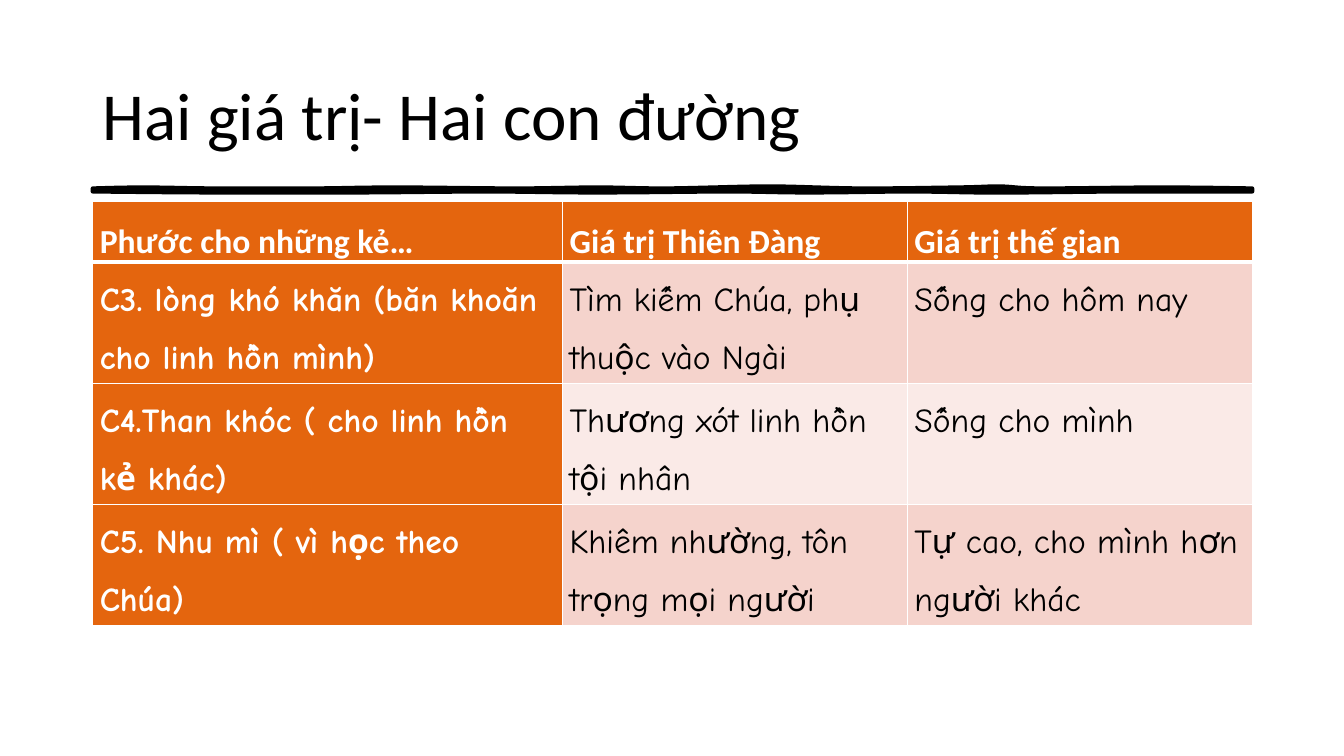
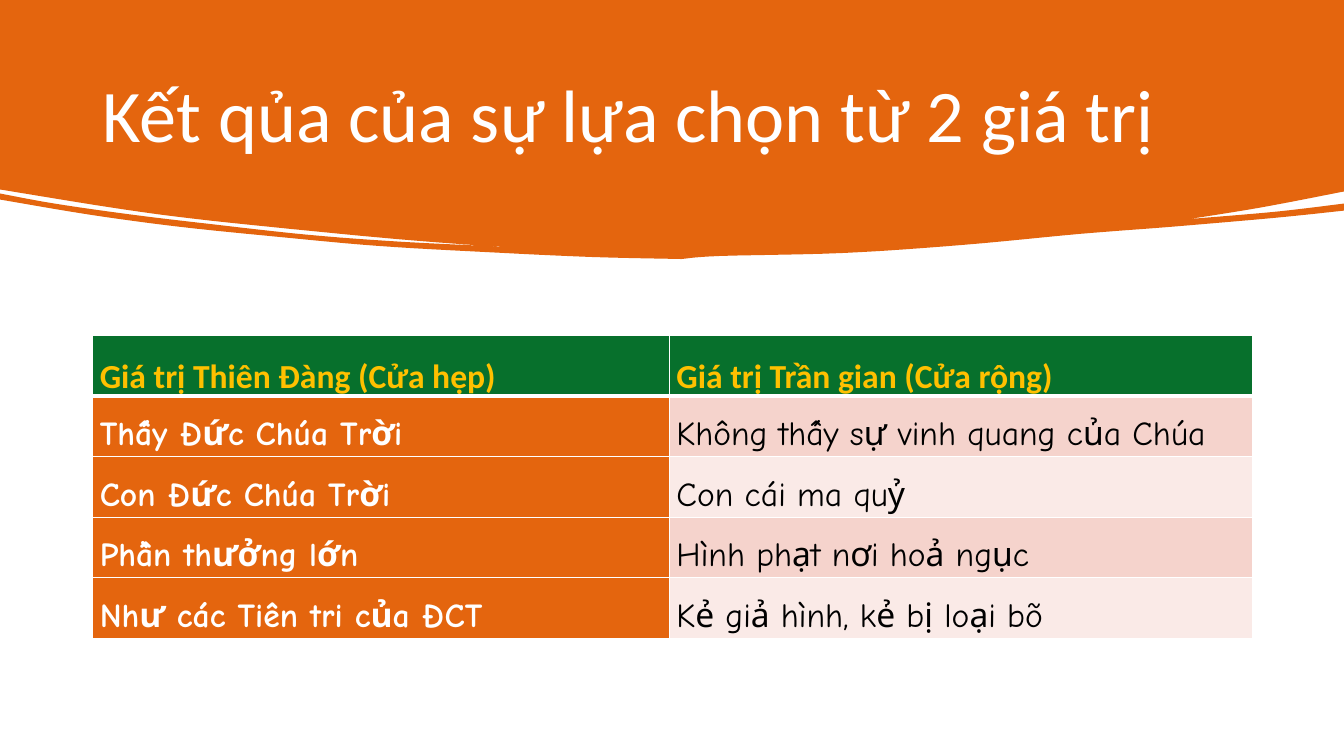
import collections
import dataclasses
import itertools

import pptx
import pptx.dml.color
import pptx.enum.text
import pptx.oxml
import pptx.oxml.ns
import pptx.util

Inches = pptx.util.Inches
Pt = pptx.util.Pt
Box = collections.namedtuple("Box", "left top width height")


@dataclasses.dataclass(frozen=True)
class Theme:
    black: str = "000000"
    white: str = "FFFFFF"
    orange: str = "E4650E"
    green: str = "07702C"
    gold: str = "FFC000"
    bands: tuple = ("F5D3CC", "FAEAE7")
    heading_font: str = "Calibri"
    body_font: str = "Comic Neue"
    title_size: int = 48
    banner_title_size: int = 53
    table_size: int = 24
    border: int = 1
    header_border: int = 3


THEME = Theme()
SLIDE_WIDTH, SLIDE_HEIGHT = 13.33, 7.5
MARGIN, CONTENT_WIDTH = 0.92, 11.5

BANNER_EDGES = (
    ((0, 0), (13.33, 0)),
    ((13.33, 1.9), (12.5, 2.06), (11.75, 2.18)),
    ((11.84, 2.17), (12.66, 2.1), (13.33, 2.02)),
    ((13.33, 2.09), (12.66, 2.16), (11.62, 2.25), (10.72, 2.32), (9.55, 2.43),
     (8.37, 2.51), (7.14, 2.54), (6.76, 2.57)),
    ((6.76, 2.57), (5.87, 2.55), (4.8, 2.5), (3.75, 2.44), (2.76, 2.35),
     (1.78, 2.25), (0.89, 2.13), (0, 1.98)),
    ((0, 1.92), (0.54, 2.02), (1.31, 2.13), (2.06, 2.22), (3.06, 2.33),
     (4, 2.4), (5.04, 2.45)),
    ((4.95, 2.45), (4.03, 2.38), (3.07, 2.29), (1.92, 2.17), (1.11, 2.06),
     (0, 1.88)),
)

RULE_EDGES = (
    ((0, 0), (0.5, -0.01), (1.2, 0), (2.2, 0), (3, -0.01), (4.2, 0), (5, -0.01),
     (5.7, 0), (6.7, -0.02), (7.6, 0), (8.6, -0.01), (9, -0.02), (9.4, 0),
     (10.6, -0.01), (11.5, 0)),
    ((11.5, 0.03), (10.2, 0.03), (9.2, 0.04), (8.8, 0.04), (8.1, 0.03),
     (7.1, 0.04), (6.3, 0.03), (5, 0.04), (3.9, 0.03), (2.6, 0.04), (1.2, 0.04),
     (0, 0.03)),
)


def color(value):
    return pptx.dml.color.RGBColor.from_string(value)


def smooth(points, steps=6):
    if len(points) < 3:
        return list(points)
    padded = (points[0], *points, points[-1])
    curve = [points[0]]
    for a, b, c, d in zip(padded, padded[1:], padded[2:], padded[3:]):
        for step in range(1, steps + 1):
            t = step / steps
            curve.append(tuple(
                (2 * q + (r - p) * t + (2 * p - 5 * q + 4 * r - s) * t ** 2
                 + (3 * q - p - 3 * r + s) * t ** 3) / 2
                for p, q, r, s in zip(a, b, c, d)))
    return curve


def add_outline(slide, box, edges, fill, line_width=None):
    curves = itertools.chain.from_iterable(smooth(edge) for edge in edges)
    points = [(Inches(box.left + x), Inches(box.top + y)) for x, y in curves]
    builder = slide.shapes.build_freeform(*points[0])
    builder.add_line_segments(points[1:], close=True)
    shape = builder.convert_to_shape()
    shape.shadow.inherit = False
    shape.fill.solid()
    shape.fill.fore_color.rgb = color(fill)
    if line_width:
        shape.line.color.rgb = color(fill)
        shape.line.width = Pt(line_width)
    else:
        shape.line.fill.background()


def add_run(paragraph, text, font, size, text_color, bold=False):
    run = paragraph.add_run()
    run.text = text
    run.font.name = font
    run.font.size = Pt(size)
    run.font.bold = bold
    run.font.color.rgb = color(text_color)


def add_title(slide, box, text, size, text_color, line_spacing=1.0):
    frame = slide.shapes.add_textbox(*map(Inches, box)).text_frame
    frame.word_wrap = True
    frame.vertical_anchor = pptx.enum.text.MSO_ANCHOR.MIDDLE
    paragraph = frame.paragraphs[0]
    paragraph.line_spacing = line_spacing
    add_run(paragraph, text, THEME.heading_font, size, text_color)


def set_borders(cell, widths):
    properties = cell._tc.get_or_add_tcPr()
    namespace = pptx.oxml.ns.nsdecls("a")
    for side, width in widths.items():
        properties.append(pptx.oxml.parse_xml(
            f'<a:ln{side} {namespace} w="{Pt(width)}"><a:solidFill>'
            f'<a:srgbClr val="{THEME.white}"/></a:solidFill></a:ln{side}>'))


def fill_cell(cell, text, fill, font, text_color, bold, borders):
    set_borders(cell, borders)
    cell.fill.solid()
    cell.fill.fore_color.rgb = color(fill)
    cell.margin_left = cell.margin_right = Inches(0.07)
    cell.margin_top = cell.margin_bottom = 0
    paragraph = cell.text_frame.paragraphs[0]
    paragraph.line_spacing = 1.5
    paragraph.space_before = Pt(6)
    add_run(paragraph, text, font, THEME.table_size, text_color, bold)


def add_comparison_table(slide, box, columns, row_heights, rows, header_fill, header_color):
    table = slide.shapes.add_table(len(rows), len(columns), *map(Inches, box)).table
    table.first_row = table.horz_banding = False
    for column, width in zip(table.columns, columns):
        column.width = Inches(width)
    for row, height in zip(table.rows, row_heights):
        row.height = Inches(height)
    for row_index, texts in enumerate(rows):
        header = row_index == 0
        borders = dict.fromkeys("LRTB", THEME.border)
        if header:
            borders["B"] = THEME.header_border
        elif row_index == 1:
            borders["T"] = THEME.header_border
        for column_index, text in enumerate(texts):
            label = column_index == 0
            if header:
                fill, text_color = header_fill, header_color
            elif label:
                fill, text_color = THEME.orange, THEME.white
            else:
                fill, text_color = THEME.bands[(row_index - 1) % 2], THEME.black
            font = THEME.heading_font if header else THEME.body_font
            fill_cell(table.cell(row_index, column_index), text, fill, font,
                      text_color, header or label, borders)


def add_values_slide(slide):
    add_outline(slide, Box(MARGIN, 1.87, CONTENT_WIDTH, 0.03), RULE_EDGES, THEME.black, 3)
    add_title(slide, Box(MARGIN, 0.4, CONTENT_WIDTH, 1.45),
              "Hai giá trị- Hai con đường", THEME.title_size, THEME.black)
    rows = (
        ("Phước cho những kẻ…", "Giá trị Thiên Đàng", "Giá trị thế gian"),
        ("C3. lòng khó khăn (băn khoăn cho linh hồn mình)",
         "Tìm kiếm Chúa, phụ thuộc vào Ngài", "Sống cho hôm nay"),
        ("C4.Than khóc ( cho linh hồn kẻ khác)",
         "Thương xót linh hồn tội nhân", "Sống cho mình"),
        ("C5. Nhu mì ( vì học theo Chúa)",
         "Khiêm nhường, tôn trọng mọi người", "Tự cao, cho mình hơn người khác"),
    )
    add_comparison_table(slide, Box(MARGIN, 2, CONTENT_WIDTH, 4), (4.66, 3.42, 3.42),
                         (0.6, 1.15, 1.15, 1.15), rows, THEME.orange, THEME.white)


def add_results_slide(slide):
    add_outline(slide, Box(0, 0, SLIDE_WIDTH, 2.57), BANNER_EDGES, THEME.orange)
    add_title(slide, Box(MARGIN, 0.44, CONTENT_WIDTH, 1.47),
              "Kết qủa của sự lựa chọn từ 2 giá trị",
              THEME.banner_title_size, THEME.white, 0.9)
    rows = (
        ("Giá trị Thiên Đàng (Cửa hẹp)", "Giá trị Trần gian (Cửa rộng)"),
        ("Thấy Đức Chúa Trời", "Không thấy sự vinh quang của Chúa"),
        ("Con Đức Chúa Trời", "Con cái ma quỷ"),
        ("Phần thưởng lớn", "Hình phạt nơi hoả ngục"),
        ("Như các Tiên tri của ĐCT", "Kẻ giả hình, kẻ bị loại bõ"),
    )
    add_comparison_table(slide, Box(MARGIN, 3.33, CONTENT_WIDTH, 2.9), (5.72, 5.78),
                         (0.58,) * len(rows), rows, THEME.green, THEME.gold)


def main():
    presentation = pptx.Presentation()
    presentation.slide_width = Inches(SLIDE_WIDTH)
    presentation.slide_height = Inches(SLIDE_HEIGHT)
    for build in (add_values_slide, add_results_slide):
        build(presentation.slides.add_slide(presentation.slide_layouts[6]))
    presentation.save("out.pptx")


if __name__ == "__main__":
    main()
